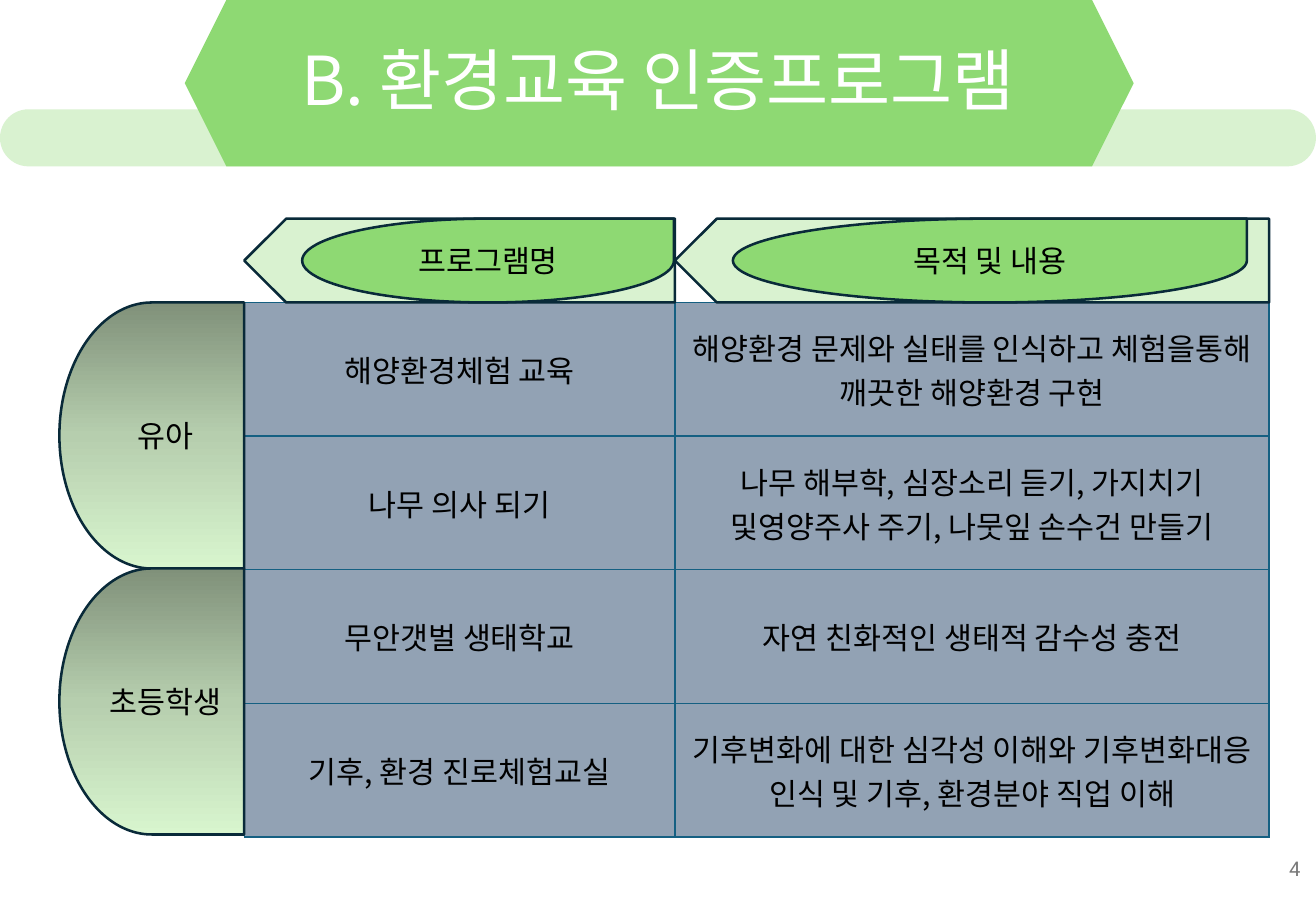
from copy import deepcopy

from lxml.etree import SubElement as Sub
from pptx import Presentation
from pptx.dml.color import RGBColor as Rgb
from pptx.enum.shapes import MSO_SHAPE as Kind
from pptx.enum.text import MSO_ANCHOR as Anchor, PP_ALIGN as Align
from pptx.oxml.ns import qn
from pptx.util import Inches, Pt

HUES = {
    "pale": "D9F2D0", "green": "8ED973", "edge": "092A39", "rule": "156082",
    "cell": "92A2B4", "ink": "000000", "white": "FFFFFF", "gray": "797979",
}
FADE = {0: "80917A", 0.5: "B6CEAE", 1: "D8F5CE"}
KOREAN = "Noto Sans CJK KR"

LEFT, TOP = 18.56, 33.2
HEAD_TOP, HEAD_HIGH = 24, 9.2
ROW_HIGH = 14.67
SIDE_LEFT, SIDE_HIGH = 4.52, 29.2
INSET = 4.4

# Heading, column width, width of its drop
COLS = [("프로그램명", 32.73, 28.25), ("목적 및 내용", 45.15, 39.06)]
GROUPS = ["유아", "초등학생"]
ROWS = [
    ("해양환경체험 교육", "해양환경 문제와 실태를 인식하고 체험을통해 깨끗한 해양환경 구현"),
    ("나무 의사 되기",
     "나무 해부학, 심장소리 듣기, 가지치기 및영양주사 주기, 나뭇잎 손수건 만들기"),
    ("무안갯벌 생태학교", "자연 친화적인 생태적 감수성 충전"),
    ("기후, 환경 진로체험교실",
     "기후변화에 대한 심각성 이해와 기후변화대응 인식 및 기후, 환경분야 직업 이해"),
]


class Board:
    """Draws on one slide; lengths are percent of its width and height."""

    def __init__(self):
        self.deck = Presentation()
        self.deck.slide_width = Inches(10.83)
        self.deck.slide_height = Inches(7.5)
        self.slide = self.deck.slides.add_slide(self.deck.slide_layouts[6])
        self.shapes = self.slide.shapes

    def wide(self, share):
        return round(self.deck.slide_width * share / 100)

    def high(self, share):
        return round(self.deck.slide_height * share / 100)

    def area(self, x, y, w, h):
        return self.wide(x), self.high(y), self.wide(w), self.high(h)

    def label(self, frame, text, size=18, hue="ink", face=KOREAN,
              align=Align.CENTER, space=1.0):
        frame.word_wrap = True
        frame.vertical_anchor = Anchor.MIDDLE
        para = frame.paragraphs[0]
        para.alignment, para.line_spacing = align, space
        run = para.add_run()
        run.text = text
        for key, value in {"size": Pt(size), "name": face}.items():
            setattr(run.font, key, value)
        run.font.color.rgb = Rgb.from_string(HUES[hue])
        Sub(run.font._element, qn("a:ea"), typeface=face)

    def text(self, box, words, **style):
        self.label(self.shapes.add_textbox(*self.area(*box)).text_frame, words, **style)

    def shape(self, kind, box, fill=None, words="", edge=True, flip=False):
        item = self.shapes.add_shape(kind, *self.area(*box))
        item.shadow.inherit = False
        if fill:
            item.fill.solid()
            item.fill.fore_color.rgb = Rgb.from_string(HUES[fill])
        else:
            self.fade(item)
        if edge:
            item.line.color.rgb = Rgb.from_string(HUES["edge"])
            item.line.width = Pt(1.5)
        else:
            item.line.fill.background()
        if flip:
            item.element.spPr.get_or_add_xfrm().set("flipH", "1")
        if words:
            self.label(item.text_frame, words)
        return item

    def fade(self, item):
        item.fill.gradient()
        item.fill.gradient_angle = 270
        stops = item.element.spPr.find(f"{qn('a:gradFill')}/{qn('a:gsLst')}")
        stops.append(deepcopy(stops[-1]))
        for stop, (place, hue) in zip(item.fill.gradient_stops, FADE.items()):
            stop.position = place
            stop.color.rgb = Rgb.from_string(hue)

    def border(self, cell):
        props = cell._tc.get_or_add_tcPr()
        for side in ("lnL", "lnR", "lnT", "lnB"):
            line = Sub(props, qn(f"a:{side}"), w=str(Pt(1)))
            Sub(Sub(line, qn("a:solidFill")), qn("a:srgbClr"), val=HUES["rule"])

    def table(self, x, y, widths, row, data):
        box = self.area(x, y, sum(widths), row * len(data))
        grid = self.shapes.add_table(len(data), len(widths), *box).table
        grid.first_row = grid.horz_banding = False
        for col, share in zip(grid.columns, widths):
            col.width = self.wide(share)
        for line, texts in zip(grid.rows, data):
            line.height = self.high(row)
            for cell, words in zip(line.cells, texts):
                self.border(cell)
                cell.fill.solid()
                cell.fill.fore_color.rgb = Rgb.from_string(HUES["cell"])
                cell.vertical_anchor = Anchor.MIDDLE
                self.label(cell.text_frame, words)


def main():
    board = Board()
    bar = board.shape(Kind.ROUNDED_RECTANGLE, (0, 12, 100, 6.27), "pale", edge=False)
    bar.adjustments[0] = 0.5
    board.shape(Kind.HEXAGON, (14.04, 0, 72.11, 18.27), "green", edge=False)
    board.text((0, 0, 100, 18.27), "B. 환경교육 인증프로그램", size=40,
               hue="white", space=0.9)
    board.table(LEFT, TOP, [wide for _, wide, _ in COLS], ROW_HIGH, ROWS)
    board.text((77.19, 92.67, 22.53, 5.33), "4", size=12, hue="gray",
               face="Roboto", align=Align.RIGHT)

    x = LEFT
    for words, wide, drop in COLS:
        board.shape(Kind.PENTAGON, (x, HEAD_TOP, wide, HEAD_HIGH), "pale", flip=True)
        board.shape(Kind.TEAR, (x + INSET, HEAD_TOP, drop, HEAD_HIGH), "green", words)
        x += wide

    for step, words in enumerate(GROUPS):
        box = SIDE_LEFT, TOP + step * SIDE_HIGH, LEFT - SIDE_LEFT, SIDE_HIGH
        board.shape(Kind.FLOWCHART_DELAY, box, words=words, flip=True)
    board.deck.save("out.pptx")


if __name__ == "__main__":
    main()
